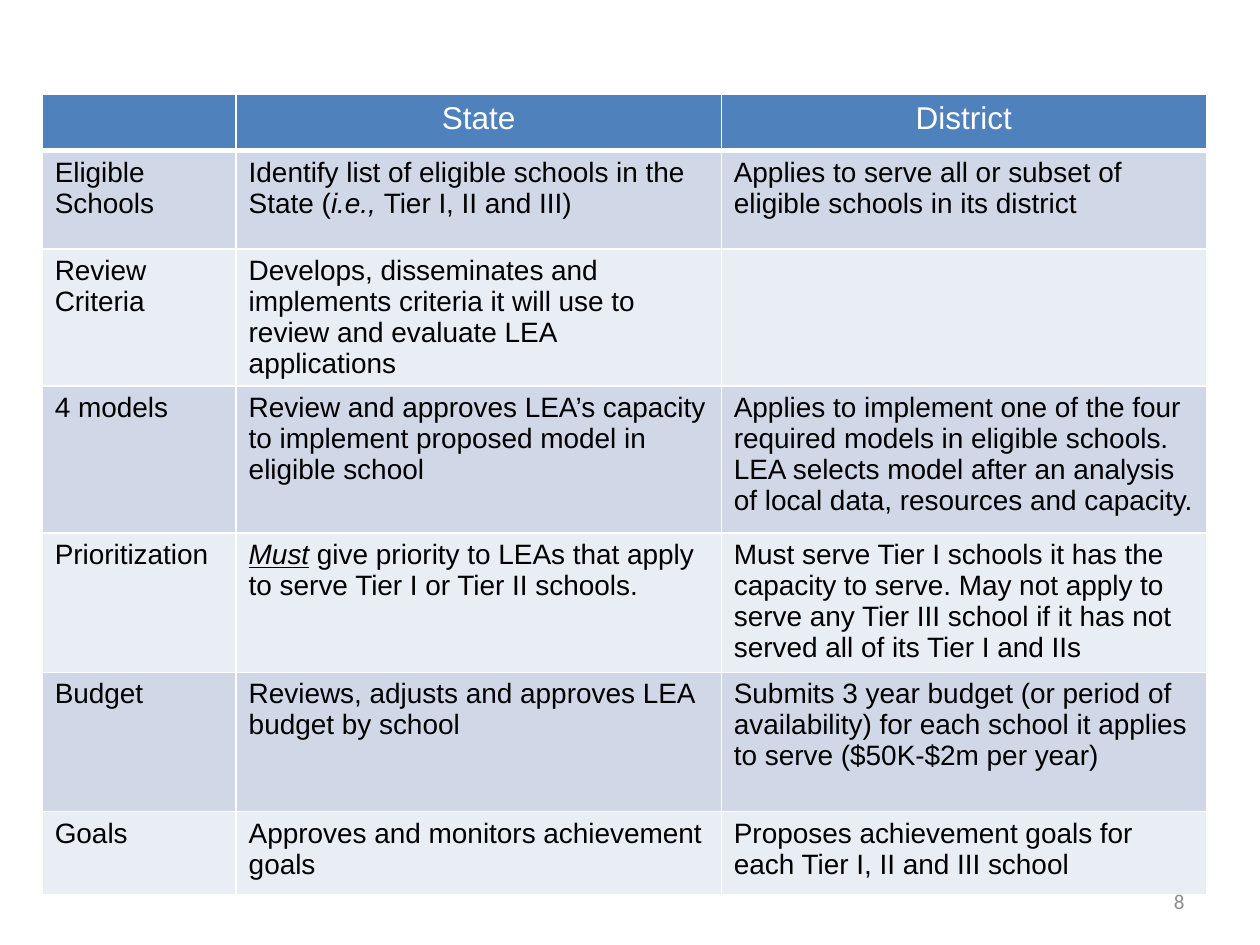
from dataclasses import dataclass

from lxml.etree import SubElement
from pptx import Presentation
from pptx.dml.color import RGBColor as RGB
from pptx.enum.text import MSO_ANCHOR as ANCHOR, PP_ALIGN as ALIGN
from pptx.oxml.ns import qn
from pptx.util import Cm, Pt


@dataclass(frozen=True)
class Theme:
    header: str = "4F81BD"
    bands: tuple = ("D0D8E8", "E9EDF4")
    border: str = "FFFFFF"
    header_text: str = "FFFFFF"
    body_text: str = "000000"
    number_text: str = "8C8C8C"
    header_size: int = 18
    body_size: int = 16
    number_size: int = 12
    table_font: str = "Arial"
    number_font: str = "Calibri"


THEME = Theme()
HEADER_FMT = {"name": THEME.table_font, "size": Pt(THEME.header_size)}
BODY_FMT = {"name": THEME.table_font, "size": Pt(THEME.body_size)}
NUMBER_FMT = {"name": THEME.number_font, "size": Pt(THEME.number_size)}
ITALIC = {"italic": True}
ITALIC_UNDERLINE = {"italic": True, "underline": True}

COL_WIDTHS = (3.91, 9.78, 9.78)
ROW_HEIGHTS = (1.13, 1.98, 2.39, 2.96, 2.81, 2.81, 1.68)

# A cell is plain text, or a list of (text, format) runs
ROWS = (
    ("", "State", "District"),
    ("Eligible Schools",
     [("Identify list of eligible schools in the State (", {}),
      ("i.e., ", ITALIC), ("Tier I, II and III)", {})],
     "Applies to serve all or subset of eligible schools in its district"),
    ("Review Criteria",
     "Develops, disseminates and implements criteria it will use to review "
     "and evaluate LEA applications",
     ""),
    ("4 models",
     "Review and approves LEA’s capacity to implement proposed model in "
     "eligible school",
     "Applies to implement one of the four required models in eligible "
     "schools. LEA selects model after an analysis of local data, resources "
     "and capacity."),
    ("Prioritization",
     [("Must", ITALIC_UNDERLINE),
      (" give priority to LEAs that apply to serve Tier I or Tier II schools.", {})],
     "Must serve Tier I schools it has the capacity to serve. May not apply "
     "to serve any Tier III school if it has not served all of its Tier I and IIs"),
    ("Budget",
     "Reviews, adjusts and approves LEA budget by school",
     "Submits 3 year budget (or period of availability) for each school it "
     "applies to serve ($50K-$2m per year)"),
    ("Goals",
     "Approves and monitors achievement goals",
     "Proposes achievement goals for each Tier I, II and III school"),
)


def write(p, content, fmt, color, align):
    p.alignment = align
    runs = [(content, {})] if isinstance(content, str) else content
    for text, extra in runs:
        if not text:
            continue
        r = p.add_run()
        r.text = text
        for key, value in {**fmt, **extra}.items():
            setattr(r.font, key, value)
        r.font.color.rgb = RGB.from_string(color)


def set_borders(cell, bottom):
    tc_pr = cell._tc.get_or_add_tcPr()
    for side, width in (("L", 1), ("R", 1), ("T", 1), ("B", bottom)):
        ln = SubElement(tc_pr, qn(f"a:ln{side}"), w=str(Pt(width)))
        fill = SubElement(ln, qn("a:solidFill"))
        SubElement(fill, qn("a:srgbClr"), val=THEME.border)


def add_roles_table(slide, left, top):
    frame = slide.shapes.add_table(len(ROWS), len(COL_WIDTHS), Cm(left), Cm(top),
                                   Cm(sum(COL_WIDTHS)), Cm(sum(ROW_HEIGHTS)))
    table = frame.table
    for col, width in zip(table.columns, COL_WIDTHS):
        col.width = Cm(width)
    for i, (row, height, contents) in enumerate(zip(table.rows, ROW_HEIGHTS, ROWS)):
        row.height = Cm(height)
        # Header row first, then alternating bands
        if i == 0:
            fill, bottom = THEME.header, 3
            style = HEADER_FMT, THEME.header_text, ALIGN.CENTER
        else:
            fill, bottom = THEME.bands[(i - 1) % 2], 1
            style = BODY_FMT, THEME.body_text, ALIGN.LEFT
        for cell, content in zip(row.cells, contents):
            set_borders(cell, bottom)
            cell.fill.solid()
            cell.fill.fore_color.rgb = RGB.from_string(fill)
            write(cell.text_frame.paragraphs[0], content, *style)


def add_page_number(slide, number, left, top, width, height):
    tf = slide.shapes.add_textbox(Cm(left), Cm(top), Cm(width), Cm(height)).text_frame
    tf.word_wrap = True
    tf.vertical_anchor = ANCHOR.MIDDLE
    write(tf.paragraphs[0], number, NUMBER_FMT, THEME.number_text, ALIGN.RIGHT)


def main():
    prs = Presentation()
    prs.slide_width, prs.slide_height = Cm(25.4), Cm(19.05)
    slide = prs.slides.add_slide(prs.slide_layouts[6])
    add_roles_table(slide, 0.85, 1.91)
    add_page_number(slide, "8", 18.2, 17.66, 5.93, 1.01)
    prs.save("out.pptx")


if __name__ == "__main__":
    main()
